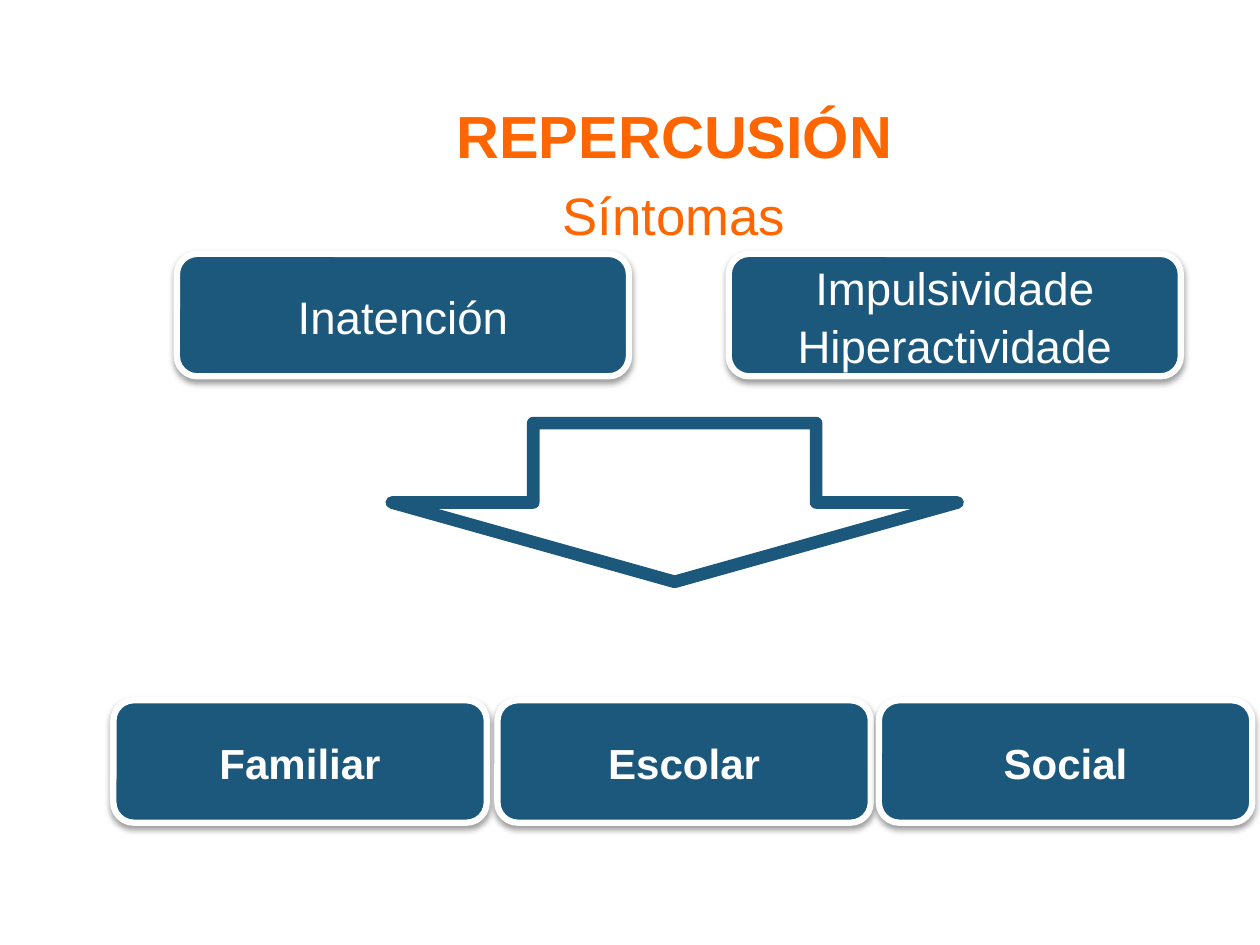
from lxml import etree
from pptx import Presentation
from pptx.dml.color import RGBColor
from pptx.enum.shapes import MSO_SHAPE as Shape
from pptx.enum.text import MSO_ANCHOR as Anchor, PP_ALIGN as Align
from pptx.oxml import parse_xml
from pptx.oxml.ns import nsdecls, qn
from pptx.util import Inches, Pt

COLORS = {"orange": "FF6600", "blue": "1B587C", "white": "FFFFFF"}
FONT = "Arial"
COLUMNS = 100
SHADOW = (
    f'<a:effectLst {nsdecls("a")}><a:outerShdw blurRad="{Pt(3)}" dist="{Pt(1.6)}" '
    'dir="5400000" rotWithShape="0"><a:srgbClr val="000000"><a:alpha val="38000"/>'
    '</a:srgbClr></a:outerShdw></a:effectLst>'
)


def rgb(name):
    return RGBColor.from_string(COLORS[name])


class SymptomSlide:
    """Places elements on a grid of square cells, 100 columns by 75 rows."""

    def __init__(self, prs):
        self.cell = prs.slide_width / COLUMNS
        self.slide = prs.slides.add_slide(prs.slide_layouts[5])

    def grid(self, *cells):
        return [round(cell * self.cell) for cell in cells]

    def set_text(self, shape, text, size, color, bold=False, anchor=Anchor.MIDDLE,
                 wrap=True, spacing=1.0):
        frame = shape.text_frame
        frame.text = text
        frame.word_wrap = wrap
        frame.vertical_anchor = anchor
        frame.margin_left = frame.margin_right = Inches(0.04)
        frame.margin_top = frame.margin_bottom = Inches(0.04)
        for line in frame.paragraphs:
            line.alignment = Align.CENTER
            line.line_spacing = spacing
            line.font.name = FONT
            line.font.size = Pt(size)
            line.font.bold = bold
            line.font.color.rgb = rgb(color)

    def paint(self, shape, fill, line, width):
        shape.fill.solid()
        shape.fill.fore_color.rgb = rgb(fill)
        shape.line.color.rgb = rgb(line)
        shape.line.width = Pt(width)
        shape.shadow.inherit = False

    def title(self, text, *place):
        title = self.slide.shapes.title
        title.left, title.top, title.width, title.height = self.grid(*place)
        self.set_text(title, text, 25.1, "orange")

    def heading(self, text, *place):
        box = self.slide.shapes.add_textbox(*self.grid(*place))
        self.set_text(box, text, 28.3, "orange", bold=True, anchor=Anchor.BOTTOM)

    def card(self, text, left, top, width, size, bold=False):
        card = self.slide.shapes.add_shape(
            Shape.ROUNDED_RECTANGLE, *self.grid(left, top, width, 9.72))
        self.paint(card, "blue", "white", 3)
        properties = card.element.spPr
        properties.replace(properties.find(qn("a:effectLst")), parse_xml(SHADOW))
        self.set_text(card, text, size, "white", bold, wrap=False, spacing=1.05)

    def down_arrow(self, left, top, width, height):
        """Draw a block arrow whose corners lie on quarters of its frame."""
        quarters = [(0, 2), (1, 2), (1, 0), (3, 0), (3, 2), (4, 2), (2, 4)]
        corners = [self.grid(left + width * x / 4, top + height * y / 4)
                   for x, y in quarters]
        builder = self.slide.shapes.build_freeform(*corners[0])
        builder.add_line_segments(corners[1:], close=True)
        arrow = builder.convert_to_shape()
        self.paint(arrow, "white", "blue", 6)
        etree.SubElement(arrow.element.spPr.find(qn("a:ln")), qn("a:round"))


def main():
    prs = Presentation()
    prs.slide_width, prs.slide_height = Inches(8.33), Inches(6.25)
    page = SymptomSlide(prs)

    page.title("Síntomas", 36.7, 14.4, 33.6, 5.2)
    symptoms = ["Inatención", "Impulsividade\nHiperactividade"]
    for left, symptom in zip((14.04, 57.84), symptoms):
        page.card(symptom, left, 20.16, 35.88, 21.7)
    page.down_arrow(31.1, 33.6, 44.9, 12.6)
    page.heading("REPERCUSIÓN", 10.2, 7, 86.7, 7)
    for left, area in zip((9, 39.48, 69.75), ("Familiar", "Escolar", "Social")):
        page.card(area, left, 55.6, 29.64, 20, bold=True)

    prs.save("out.pptx")


if __name__ == "__main__":
    main()
